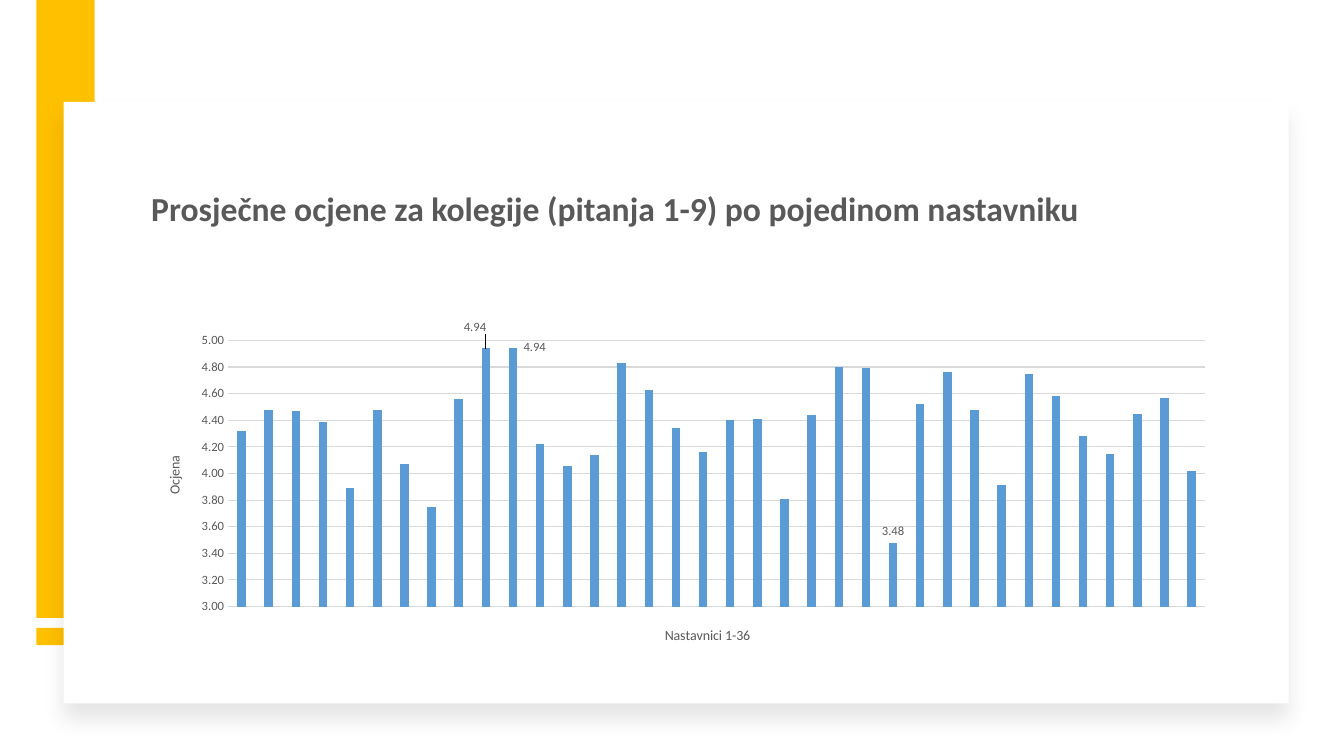
"""Build a slide with a column chart of average teacher grades."""
from lxml import etree
from pptx import Presentation
from pptx.chart.data import CategoryChartData
from pptx.dml.color import RGBColor
from pptx.enum.chart import XL_CHART_TYPE, XL_LABEL_POSITION, XL_TICK_MARK
from pptx.enum.shapes import MSO_SHAPE
from pptx.enum.text import MSO_ANCHOR, PP_ALIGN
from pptx.oxml import parse_xml
from pptx.oxml.ns import nsdecls, qn
from pptx.util import Inches, Pt

COLUMNS = XL_CHART_TYPE.COLUMN_CLUSTERED
RECTANGLE = MSO_SHAPE.RECTANGLE
OUTSIDE_END = XL_LABEL_POSITION.OUTSIDE_END
NO_TICK = XL_TICK_MARK.NONE
BOTTOM = MSO_ANCHOR.BOTTOM
LEFT = PP_ALIGN.LEFT

FONT = "Calibri"
GRAY, GRID, BLUE, GOLD, WHITE = "595959", "D9D9D9", "5B9BD5", "FFC000", "FFFFFF"
TITLE = "Prosječne ocjene za kolegije (pitanja 1-9) po pojedinom nastavniku"
GRADES = [
    4.32, 4.48, 4.47, 4.39, 3.89, 4.48, 4.07, 3.75, 4.56, 4.94, 4.94, 4.22,
    4.06, 4.14, 4.83, 4.63, 4.34, 4.16, 4.40, 4.41, 3.81, 4.44, 4.80, 4.79,
    3.48, 4.52, 4.76, 4.48, 3.91, 4.75, 4.58, 4.28, 4.15, 4.45, 4.57, 4.02,
]
LABEL_OFFSETS = {9: (-0.01, -0.03), 10: (0.02, 0.03), 24: None}
GOLD_BARS = [(0.36, 0, 0.58, 6.13), (0.36, 6.23, 0.58, 0.17)]
CARD = (0.63, 1.01, 12.15, 5.97)
TITLE_BOX = (1.4, 1.35, 10.77, 1.48)
CHART_BOX = (1.4, 3.17, 10.77, 3.39)
PLOT = {"x": 0.08, "y": 0.06, "w": 0.9, "h": 0.78}


def color(value):
    return RGBColor.from_string(value)


def style_font(font, size, bold=False):
    font.name, font.size, font.bold = FONT, Pt(size), bold
    font.color.rgb = color(GRAY)


def add_rectangle(slide, box, fill):
    shape = slide.shapes.add_shape(RECTANGLE, *map(Inches, box))
    shape.fill.solid()
    shape.fill.fore_color.rgb = color(fill)
    shape.line.fill.background()
    shape.shadow.inherit = False
    return shape


def add_card_shadow(shape):
    effects = shape._element.spPr.find(qn("a:effectLst"))
    effects.append(parse_xml(
        f'<a:outerShdw {nsdecls("a")} blurRad="{Pt(15)}" dist="{Pt(11)}" dir="5400000" '
        'algn="t" rotWithShape="0"><a:srgbClr val="000000"><a:alpha val="10000"/>'
        '</a:srgbClr></a:outerShdw>'))


def make_layout(sizes, modes):
    layout = parse_xml(f'<c:layout {nsdecls("c")}><c:manualLayout/></c:layout>')
    for tag, value in [*modes.items(), *sizes.items()]:
        etree.SubElement(layout[0], qn(f"c:{tag}"), val=str(value))
    return layout


def place_after(element, layout):
    parent = element.getparent()
    for existing in parent.findall(qn("c:layout")):
        parent.remove(existing)
    element.addnext(layout)


def title_axis(axis, text, x, y):
    frame = axis.axis_title.text_frame
    frame.text = text
    style_font(frame.paragraphs[0].runs[0].font, 10)
    text_element = axis.axis_title._element.find(qn("c:tx"))
    modes = {"xMode": "edge", "yMode": "edge"}
    place_after(text_element, make_layout({"x": x, "y": y}, modes))


def label_points(series):
    labels = series.data_labels
    labels.show_value = False
    for index, offset in LABEL_OFFSETS.items():
        label = series.points[index].data_label
        style_font(label.font, 9)
        label.position = OUTSIDE_END
        if offset:
            index_element = labels._element.xpath(f'c:dLbl/c:idx[@val="{index}"]')[0]
            place_after(index_element, make_layout(dict(zip("xy", offset)), {}))


def add_grade_chart(slide):
    data = CategoryChartData(number_format="0.00")
    data.categories = [str(number) for number in range(1, len(GRADES) + 1)]
    data.add_series("Series 1", GRADES)
    chart = slide.shapes.add_chart(COLUMNS, *map(Inches, CHART_BOX), data).chart
    chart.has_legend = chart.has_title = False
    style_font(chart.font, 10)

    plot = chart.plots[0]
    plot.gap_width, plot.overlap, plot.vary_by_categories = 219, -27, False
    series = plot.series[0]
    series.format.fill.solid()
    series.format.fill.fore_color.rgb = color(BLUE)
    label_points(series)

    grades = chart.value_axis
    grades.minimum_scale, grades.maximum_scale, grades.major_unit = 3, 5, 0.2
    grades.major_tick_mark = grades.minor_tick_mark = NO_TICK
    grades.format.line.fill.background()
    grades.major_gridlines.format.line.color.rgb = color(GRID)
    grades.major_gridlines.format.line.width = Pt(0.75)
    grades.tick_labels.number_format = "0.00"
    grades.tick_labels.number_format_is_linked = False
    style_font(grades.tick_labels.font, 9)
    title_axis(grades, "Ocjena", 0.02, 0.39)
    title_axis(chart.category_axis, "Nastavnici 1-36", 0.48, 0.89)
    chart.category_axis.visible = False

    area = chart._chartSpace.chart.plotArea
    for existing in area.findall(qn("c:layout")):
        area.remove(existing)
    modes = {"layoutTarget": "inner", "xMode": "edge", "yMode": "edge"}
    area.insert(0, make_layout(PLOT, modes))


def fill_title(title):
    title.left, title.top, title.width, title.height = map(Inches, TITLE_BOX)
    frame = title.text_frame
    frame.text = TITLE
    frame.word_wrap = True
    frame.vertical_anchor = BOTTOM
    frame.margin_bottom = Inches(0.56)
    paragraph = frame.paragraphs[0]
    paragraph.alignment = LEFT
    paragraph.line_spacing = 0.9
    style_font(paragraph.runs[0].font, 24, bold=True)


def main():
    presentation = Presentation()
    presentation.slide_width, presentation.slide_height = Inches(13.33), Inches(7.5)
    slide = presentation.slides.add_slide(presentation.slide_layouts[5])
    for box in GOLD_BARS:
        add_rectangle(slide, box, GOLD)
    add_card_shadow(add_rectangle(slide, CARD, WHITE))
    title = slide.shapes.title
    fill_title(title)
    slide.shapes._spTree.append(title._element)
    add_grade_chart(slide)
    presentation.save("out.pptx")


if __name__ == "__main__":
    main()
